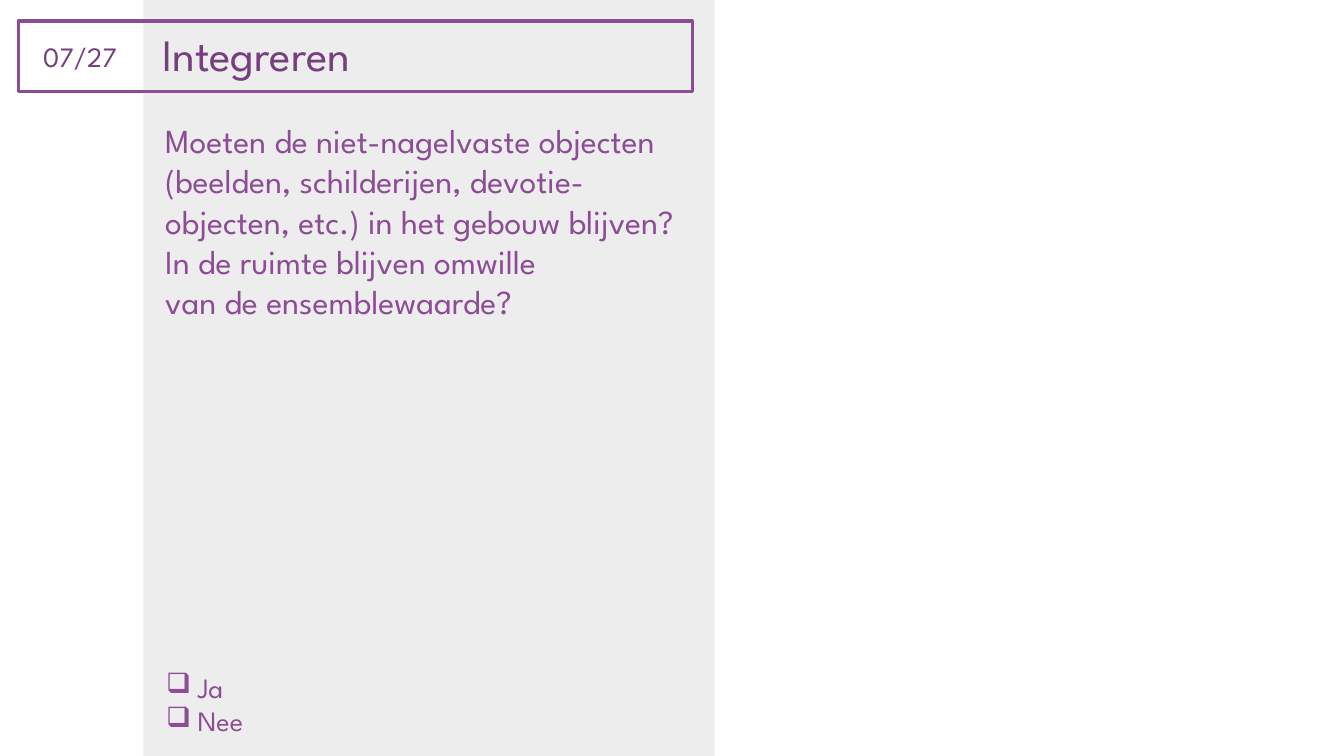
from dataclasses import dataclass

from lxml import etree
from pptx import Presentation
from pptx.dml.color import RGBColor
from pptx.enum import shapes, text
from pptx.oxml import ns
from pptx.util import Pt


@dataclass(frozen=True)
class Theme:
    font: str = "League Spartan"
    panel: str = "EEEDED"
    dark: str = "764080"
    light: str = "8D4D96"
    title: int = 32
    body: int = 24
    small: int = 20


THEME = Theme()


def add_rect(slide, box, fill=None, line=None):
    rect = slide.shapes.add_shape(shapes.MSO_SHAPE.RECTANGLE, *map(Pt, box))
    rect.shadow.inherit = False
    if fill:
        rect.fill.solid()
        rect.fill.fore_color.rgb = RGBColor.from_string(fill)
    else:
        rect.fill.background()
    if line:
        rect.line.color.rgb = RGBColor.from_string(line)
        rect.line.width = Pt(2.25)
    else:
        rect.line.fill.background()


def add_text(slide, box, lines, size, color, align=text.PP_ALIGN.LEFT):
    """Add one paragraph per line and return the text frame."""
    frame = slide.shapes.add_textbox(*map(Pt, box)).text_frame
    frame.word_wrap = True
    frame.auto_size = text.MSO_AUTO_SIZE.SHAPE_TO_FIT_TEXT
    for i, line in enumerate(lines):
        para = frame.add_paragraph() if i else frame.paragraphs[0]
        para.alignment = align
        run = para.add_run()
        run.text = line
        run.font.name = THEME.font
        run.font.size = Pt(size)
        run.font.color.rgb = RGBColor.from_string(color)
    return frame


def add_title(slide, box, title):
    """Add the title, lifted above the middle of its box."""
    frame = add_text(slide, box, [title], THEME.title, THEME.dark)
    frame.auto_size = text.MSO_AUTO_SIZE.NONE
    frame.vertical_anchor = text.MSO_ANCHOR.MIDDLE
    frame.margin_bottom = Pt(42)


def add_checks(slide, box, options):
    frame = add_text(slide, box, options, THEME.small, THEME.light)
    indent = Pt(22.5)
    for para in frame.paragraphs:
        props = para._p.get_or_add_pPr()
        props.set("marL", str(indent))
        props.set("indent", str(-indent))
        etree.SubElement(props, ns.qn("a:buChar")).set("char", "❑")


def main():
    deck = Presentation()
    deck.slide_width, deck.slide_height = Pt(960), Pt(540)
    slide = deck.slides.add_slide(deck.slide_layouts[6])
    add_rect(slide, (102.4, 0, 408.2, 540), fill=THEME.panel)
    add_rect(slide, (13, 15, 481.7, 50.4), line=THEME.light)
    add_title(slide, (108.7, 33.8, 391, 46.8), "Integreren")
    add_text(slide, (15.8, 24.5, 82.8, 31.5), ["07/27"],
             THEME.small, THEME.dark, text.PP_ALIGN.CENTER)
    question = [
        "Moeten de niet-nagelvaste objecten (beelden, schilderijen, "
        "devotie-objecten, etc.) in het gebouw blijven?",
        "In de ruimte blijven omwille",
        "van de ensemblewaarde?",
    ]
    add_text(slide, (110.9, 82.1, 391, 181.4), question,
             THEME.body, THEME.light)
    add_checks(slide, (111.6, 475.2, 180, 55.4), ["Ja", "Nee"])
    deck.save("out.pptx")


if __name__ == "__main__":
    main()
